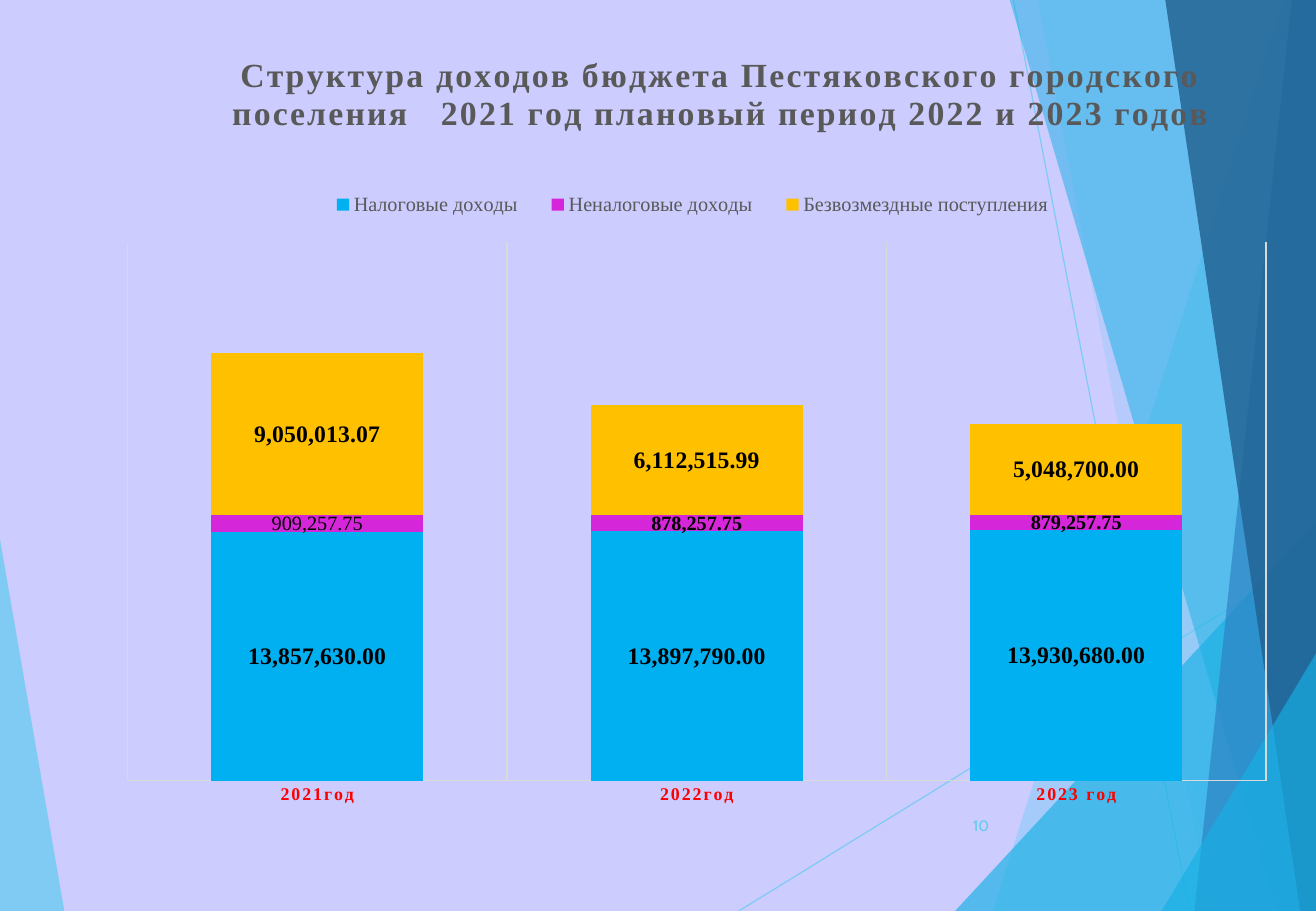
from lxml.etree import SubElement
from pptx import Presentation
from pptx.chart.data import CategoryChartData
from pptx.dml.color import RGBColor
from pptx.enum.chart import XL_CHART_TYPE, XL_LEGEND_POSITION, XL_TICK_MARK
from pptx.enum.shapes import MSO_CONNECTOR
from pptx.enum.text import MSO_ANCHOR, PP_ALIGN
from pptx.oxml.ns import qn
from pptx.util import Emu, Pt

UNIT = 9144  # EMU in one px, 100 px to the inch
WIDE, HIGH = 1083, 750
CHART = (49, 20, 1048, 706)  # left, top, width, height
SERIF, SANS = "Times New Roman", "Cabin"
GRAY, PALE, CYAN, SKY = "595959", "D9D9D9", "5FCBEF", "17B0E4"
FORMAT = "#,##0.00"

# Facets from back to front: points, color, opacity
LEFT = [([(0, 444), (53, 750), (0, 750)], CYAN, 70)]
RIGHT = [
    ([(1056, 0), (817, 750), (1083, 750), (1083, 0)], CYAN, 36),
    ([(854, 0), (996, 750), (1083, 750), (1083, 0)], CYAN, 20),
    ([(786, 750), (1083, 429), (1083, 750)], SKY, 66),
    ([(831, 0), (1051, 750), (1083, 750), (1083, 0)], SKY, 50),
    ([(1063, 0), (983, 750), (1083, 750), (1083, 0)], "2E83C3", 70),
    ([(959, 0), (1070, 750), (1083, 750), (1083, 0)], "226292", 82),
    ([(956, 750), (1083, 538), (1083, 750)], SKY, 66),
]
RAYS = [(608, 750, 1083, 457), (834, 0, 979, 750)]

YEARS = ["2021год", "2022год", "2023 год"]
# Name, values, color, label size
INCOME = [
    ("Налоговые доходы", [13857630, 13897790, 13930680], "00B0F0", 14),
    ("Неналоговые доходы", [909257.75, 878257.75, 879257.75], "D626DA", 12),
    ("Безвозмездные поступления", [9050013.07, 6112515.99, 5048700], "FFC000", 14),
]
# Title runs: text, letter spacing in hundredths of a point
TITLE = [
    ("Структура доходов бюджета Пестяковского городского поселения", 120),
    (" ", 1350),
    ("2021 год плановый период 2022 и 2023 годов", 120),
]


def px(num):
    return Emu(num * UNIT)


def color(code):
    return RGBColor.from_string(code)


def fade(shape, part):
    for node in shape.element.xpath(".//a:srgbClr"):
        SubElement(node, qn("a:alpha")).set("val", str(part * 1000))


def style(font, size, code, face=SERIF, bold=False):
    font.size, font.name, font.bold = Pt(size), face, bold
    font.color.rgb = color(code)


def rule(line, code):
    line.color.rgb = color(code)
    line.width = Pt(0.75)


def facet(slide, points, code, part):
    form = slide.shapes.build_freeform(*points[0], scale=UNIT)
    form.add_line_segments(points[1:], close=True)
    shape = form.convert_to_shape()
    shape.shadow.inherit = False
    shape.fill.solid()
    shape.fill.fore_color.rgb = color(code)
    shape.line.fill.background()
    fade(shape, part)


def ray(slide, *ends):
    line = slide.shapes.add_connector(MSO_CONNECTOR.STRAIGHT, *map(px, ends))
    rule(line.line, CYAN)
    fade(line, 70)
    SubElement(line.element.spPr, qn("a:effectLst"))


def place(chart, tag, index, *box):
    """Give a chart part its left, top, width and height in px."""
    node = chart.element.xpath(".//c:" + tag)[0]
    for old in node.findall(qn("c:layout")):
        node.remove(old)
    layout = SubElement(node, qn("c:layout"))
    node.insert(index, layout)
    manual = SubElement(layout, qn("c:manualLayout"))
    sides = {"layoutTarget": "inner"} if tag == "plotArea" else {}
    sides.update(xMode="edge", yMode="edge")
    for side, num, full in zip("xywh", box, CHART[2:] * 2):
        sides[side] = num / full
    for side, val in sides.items():
        SubElement(manual, qn("c:" + side)).set("val", str(val))


def head(chart):
    chart.has_title = True
    title = chart.chart_title
    title.include_in_layout = False
    para = title.text_frame.paragraphs[0]
    for text, gap in TITLE:
        run = para.add_run()
        run.text = text
        style(run.font, 20, GRAY, bold=True)
    nodes = chart.element.xpath(".//c:title//a:r/a:rPr")
    for node, (text, gap) in zip(nodes, TITLE):
        node.set("spc", str(gap))
    place(chart, "title", 1, 139, 22)


def legend(chart):
    chart.has_legend = True
    chart.legend.position = XL_LEGEND_POSITION.TOP
    chart.legend.include_in_layout = False
    style(chart.legend.font, 12, GRAY)
    place(chart, "legend", 1, 206, 131, 630, 35)


def axes(chart):
    years, sums = chart.category_axis, chart.value_axis
    years.major_tick_mark = years.minor_tick_mark = XL_TICK_MARK.NONE
    style(years.tick_labels.font, 10.6, "FF0000", bold=True)
    for node in chart.element.xpath(".//c:catAx//a:defRPr"):
        node.set("spc", "120")
    rule(years.format.line, PALE)
    years.has_major_gridlines = True
    rule(years.major_gridlines.format.line, PALE)
    sums.has_major_gridlines = False
    sums.minimum_scale, sums.maximum_scale = 0, 30000000
    sums.visible = False


def bars(chart):
    plot = chart.plots[0]
    plot.gap_width, plot.overlap = 79, 100
    plot.vary_by_categories = False
    for item, (name, vals, code, size) in zip(plot.series, INCOME):
        item.format.fill.solid()
        item.format.fill.fore_color.rgb = color(code)
        labels = item.data_labels
        labels.show_value = True
        labels.number_format, labels.number_format_is_linked = FORMAT, False
        style(labels.font, size, "000000", bold=True)
    # The one label in regular weight
    frame = plot.series[1].points[0].data_label.text_frame
    run = frame.paragraphs[0].add_run()
    run.text = "909,257.75"
    style(run.font, 12, "000000")


def graph(slide):
    data = CategoryChartData(number_format=FORMAT)
    data.categories = YEARS
    for name, vals, code, size in INCOME:
        data.add_series(name, vals)
    kind = XL_CHART_TYPE.COLUMN_STACKED
    chart = slide.shapes.add_chart(kind, *map(px, CHART), data).chart
    style(chart.font, 10, "000000", SANS)
    head(chart)
    legend(chart)
    axes(chart)
    bars(chart)
    place(chart, "plotArea", 0, 56, 179, 937, 444)


def number(slide, text):
    frame = slide.shapes.add_textbox(*map(px, (763, 660, 61, 40))).text_frame
    frame.word_wrap = True
    frame.vertical_anchor = MSO_ANCHOR.MIDDLE
    para = frame.paragraphs[0]
    para.alignment = PP_ALIGN.RIGHT
    run = para.add_run()
    run.text = text
    style(run.font, 9, CYAN, SANS)


def main():
    deck = Presentation()
    deck.slide_width, deck.slide_height = px(WIDE), px(HIGH)
    slide = deck.slides.add_slide(deck.slide_layouts[6])
    slide.background.fill.solid()
    slide.background.fill.fore_color.rgb = color("CCCCFF")
    # Backdrop
    for args in LEFT:
        facet(slide, *args)
    for ends in RAYS:
        ray(slide, *ends)
    for args in RIGHT:
        facet(slide, *args)
    # Content
    graph(slide)
    number(slide, "10")
    deck.save("out.pptx")


if __name__ == "__main__":
    main()
